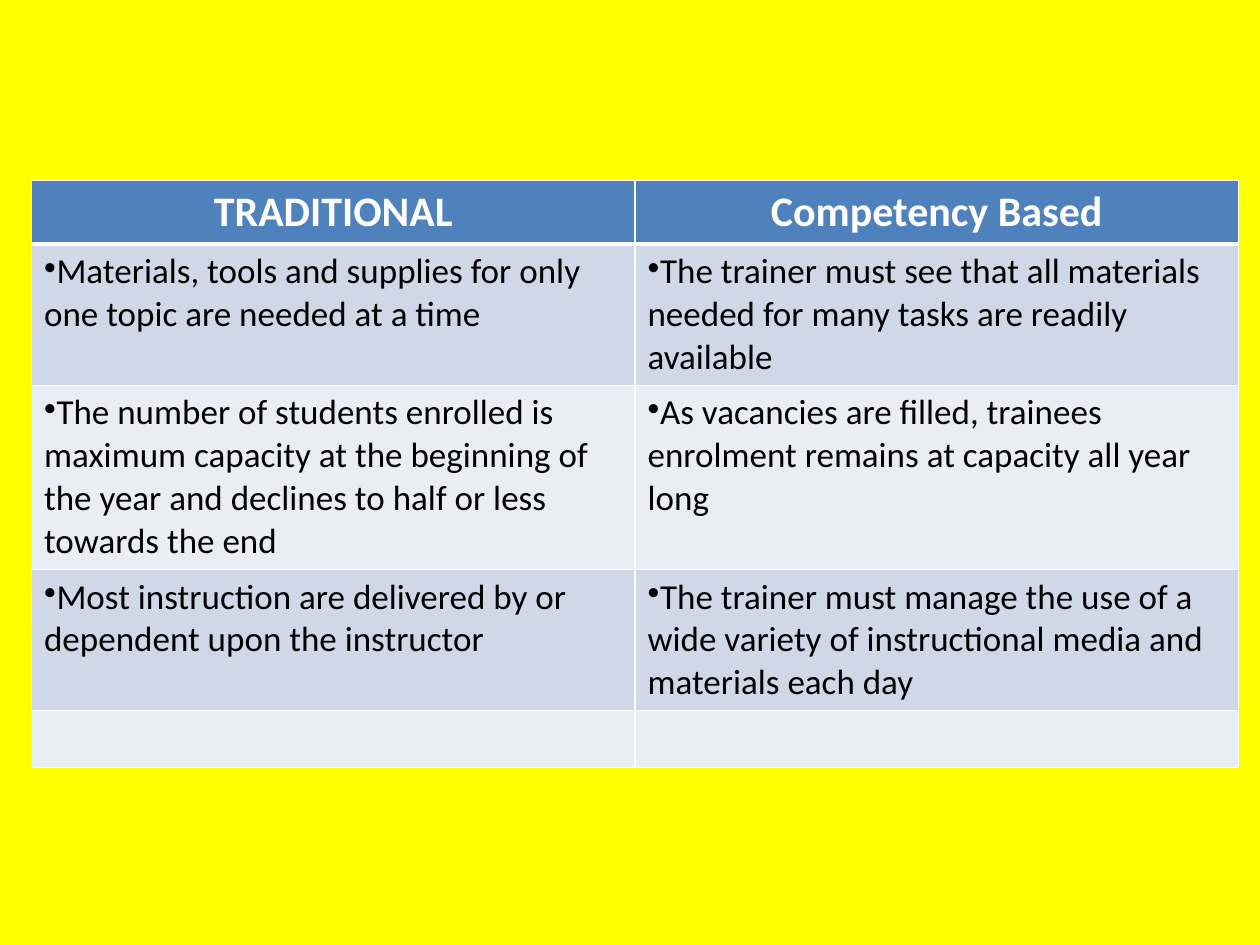
from lxml.etree import SubElement
from pptx import Presentation
from pptx.dml.color import RGBColor
from pptx.enum.text import PP_ALIGN
from pptx.oxml.ns import qn
from pptx.util import Inches, Pt

YELLOW = RGBColor(0xFF, 0xFF, 0x00)
BLUE = RGBColor(0x4F, 0x81, 0xBD)
BAND_DARK = RGBColor(0xD0, 0xD8, 0xE8)
BAND_LIGHT = RGBColor(0xE9, 0xED, 0xF4)
WHITE = RGBColor(0xFF, 0xFF, 0xFF)
BLACK = RGBColor(0x00, 0x00, 0x00)

HEADER_FONT = {"name": "Calibri", "size": Pt(24), "bold": True}
BODY_FONT = {"name": "Calibri", "size": Pt(20), "bold": False}

COMPARISON = [
    ("TRADITIONAL", "Competency Based"),
    ("Materials, tools and supplies for only one topic are needed at a time",
     "The trainer must see that all materials needed for many tasks are readily available"),
    ("The number of students enrolled is maximum capacity at the beginning of the year "
     "and declines to half or less towards the end",
     "As vacancies are filled, trainees enrolment remains at capacity all year long"),
    ("Most instruction are delivered by or dependent upon the instructor",
     "The trainer must manage the use of a wide variety of instructional media "
     "and materials each day"),
    ("", ""),
]
ROW_HEIGHTS = [0.5, 1.12, 1.46, 1.12, 0.45]


class SlideBuilder:
    def __init__(self, deck):
        self.page = deck.slides.add_slide(deck.slide_layouts[6])

    def background(self, color):
        fill = self.page.background.fill
        fill.solid()
        fill.fore_color.rgb = color

    def table(self, rows, heights, left, top, width):
        columns = len(rows[0])
        frame = self.page.shapes.add_table(
            len(rows), columns, Inches(left), Inches(top),
            Inches(width), Inches(sum(heights)))
        grid = frame.table
        for column in grid.columns:
            column.width = Inches(width / columns)
        for index, (texts, height) in enumerate(zip(rows, heights)):
            grid.rows[index].height = Inches(height)
            for cell, text in zip(grid.rows[index].cells, texts):
                self.borders(cell, index)
                self.fill(cell, index)
                if text:
                    self.text(cell, text, index == 0)

    def borders(self, cell, row):
        widths = {"lnL": 1, "lnR": 1, "lnT": 3 if row == 1 else 1,
                  "lnB": 3 if row == 0 else 1}
        properties = cell._tc.get_or_add_tcPr()
        for tag, points in widths.items():
            line = SubElement(properties, qn(f"a:{tag}"), w=str(Pt(points)))
            solid = SubElement(line, qn("a:solidFill"))
            SubElement(solid, qn("a:srgbClr"), val=str(WHITE))

    def fill(self, cell, row):
        cell.fill.solid()
        band = BAND_DARK if row % 2 else BAND_LIGHT
        cell.fill.fore_color.rgb = band if row else BLUE

    def text(self, cell, text, is_header):
        para = cell.text_frame.paragraphs[0]
        span = para.add_run()
        span.text = text
        for name, value in (HEADER_FONT if is_header else BODY_FONT).items():
            setattr(span.font, name, value)
        span.font.color.rgb = WHITE if is_header else BLACK
        if is_header:
            para.alignment = PP_ALIGN.CENTER
        else:
            SubElement(para._p.get_or_add_pPr(), qn("a:buChar"), char="•")


def main():
    deck = Presentation()
    deck.slide_width = Inches(10)
    deck.slide_height = Inches(7.5)
    builder = SlideBuilder(deck)
    builder.background(YELLOW)
    builder.table(COMPARISON, ROW_HEIGHTS, left=0.25, top=1.43, width=9.58)
    deck.save("out.pptx")


if __name__ == "__main__":
    main()
